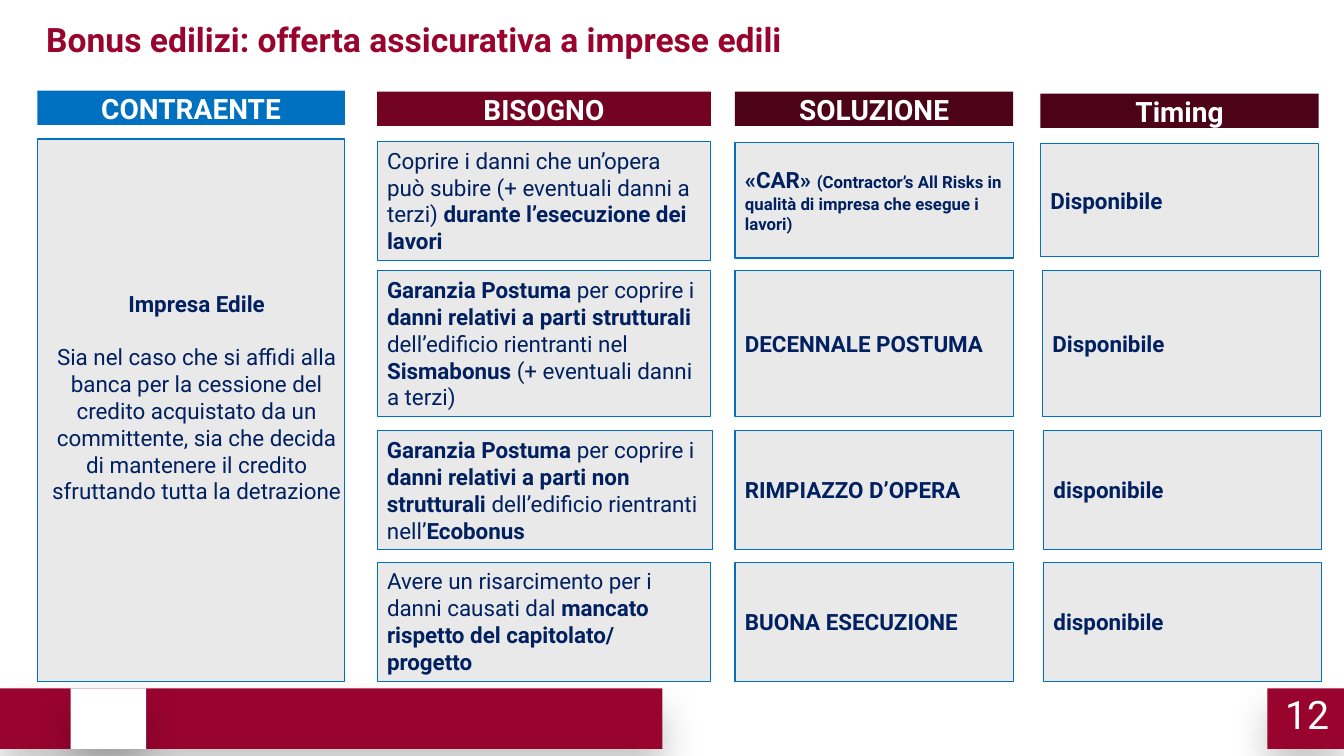
"""Build the slide on insurance offers for construction companies."""
from dataclasses import dataclass
from typing import NamedTuple

from lxml.etree import SubElement
from pptx import Presentation
from pptx.dml.color import RGBColor
from pptx.enum.shapes import MSO_SHAPE as SHAPE
from pptx.enum.text import MSO_ANCHOR as ANCHOR, PP_ALIGN as ALIGN
from pptx.oxml.ns import qn
from pptx.util import Emu, Pt

PX = 9144
FONT = "Roboto"
CRIMSON, WINE, MAROON = "99042F", "730323", "4C0217"
BLUE, NAVY, GREY, WHITE = "0070C0", "002060", "E9E9E9", "FFFFFF"


class Rect(NamedTuple):
    left: int
    top: int
    width: int
    height: int


class Run(NamedTuple):
    text: str
    bold: bool = True
    size: int = 0


@dataclass(frozen=True)
class Style:
    size: int
    color: str
    align: ALIGN = ALIGN.LEFT
    anchor: ANCHOR = ANCHOR.MIDDLE
    margins: tuple[int, int, int, int] = (10, 5, 10, 5)
    wrap: bool = True
    space_before: int = 0


@dataclass(frozen=True)
class Panel:
    rect: Rect
    fill: str
    paragraphs: tuple[tuple[Run, ...], ...] = ()
    style: Style = Style(16, NAVY)
    line: float = 0
    shadow: bool = False


HEADER = Style(20, WHITE, ALIGN.CENTER, margins=(0, 0, 0, 0))
CLIENT = Style(16, NAVY, ALIGN.CENTER, margins=(11, 0, 0, 26), space_before=19)
CARD = Style(16, NAVY)
TOP_CARD = Style(16, NAVY, anchor=ANCHOR.TOP)
TITLE = Style(24, CRIMSON, anchor=ANCHOR.TOP)
NUMBER = Style(28, WHITE, ALIGN.CENTER, margins=(13, 7, 13, 7), wrap=False)


def header(rect: Rect, fill: str, text: str) -> Panel:
    """Describe a column heading."""
    return Panel(rect, fill, ((Run(text),),), HEADER)


def card(rect: Rect, *runs: Run, style: Style = CARD) -> Panel:
    """Describe a bordered cell with one paragraph."""
    return Panel(rect, GREY, (runs,), style, 0.75)


PANELS = (
    Panel(Rect(0, 683, 657, 60), CRIMSON, shadow=True),
    Panel(Rect(70, 683, 75, 60), WHITE, shadow=True),
    Panel(Rect(1257, 683, 76, 60), CRIMSON, shadow=True),
    Panel(Rect(37, 138, 305, 538), GREY, (
        (Run("Impresa Edile"),),
        (Run("Sia nel caso che si affidi alla banca per la cessione del credito "
             "acquistato da un committente, sia che decida di mantenere il credito "
             "sfruttando tutta la detrazione", False),),
    ), CLIENT, 1),
    header(Rect(37, 90, 305, 34), BLUE, "CONTRAENTE"),
    header(Rect(374, 91, 331, 34), WINE, "BISOGNO"),
    header(Rect(729, 91, 276, 34), MAROON, "SOLUZIONE"),
    header(Rect(1032, 93, 276, 34), MAROON, "Timing"),
    card(Rect(374, 140, 331, 118),
         Run("Coprire i danni che un’opera può subire (+ eventuali danni a terzi) ", False),
         Run("durante l’esecuzione dei lavori")),
    card(Rect(374, 268, 331, 145),
         Run("Garanzia Postuma "), Run("per coprire i ", False),
         Run("danni relativi a parti strutturali "),
         Run("dell’edificio rientranti nel ", False),
         Run("Sismabonus "), Run("(+ eventuali danni a terzi)", False)),
    card(Rect(374, 427, 333, 118),
         Run("Garanzia Postuma "), Run("per coprire i ", False),
         Run("danni relativi a parti non strutturali "),
         Run("dell’edificio rientranti nell’", False), Run("Ecobonus")),
    card(Rect(374, 558, 331, 118),
         Run("Avere un risarcimento per i danni causati dal ", False),
         Run("mancato rispetto del capitolato/ progetto"), style=TOP_CARD),
    card(Rect(729, 141, 276, 115), Run("«CAR» "),
         Run("(Contractor’s All Risks in qualità di impresa che esegue i lavori)", size=12)),
    card(Rect(729, 268, 276, 145), Run("DECENNALE POSTUMA")),
    card(Rect(729, 427, 276, 118), Run("RIMPIAZZO D’OPERA")),
    card(Rect(729, 558, 276, 118), Run("BUONA ESECUZIONE")),
    card(Rect(1032, 142, 276, 113), Run("Disponibile")),
    card(Rect(1034, 268, 276, 145), Run("Disponibile")),
    card(Rect(1035, 427, 276, 118), Run("disponibile")),
    card(Rect(1035, 558, 276, 118), Run("disponibile")),
)


def rgb(value: str) -> RGBColor:
    """Turn a hex string into a colour."""
    return RGBColor.from_string(value)


def emu(lengths: tuple[int, ...]) -> list[Emu]:
    """Scale px to EMU."""
    return [Emu(n * PX) for n in lengths]


def write(s, paragraphs: tuple[tuple[Run, ...], ...], style: Style) -> None:
    """Fill a shape with styled paragraphs."""
    tf = s.text_frame
    tf.word_wrap = style.wrap
    tf.vertical_anchor = style.anchor
    tf.margin_left, tf.margin_top, tf.margin_right, tf.margin_bottom = emu(style.margins)
    for i, runs in enumerate(paragraphs):
        p = tf.add_paragraph() if i else tf.paragraphs[0]
        p.alignment = style.align
        if i:
            p.space_before = Pt(style.space_before)
        p.font.name, p.font.size = FONT, Pt(style.size)
        p.font.color.rgb = rgb(style.color)
        p.font.bold = all(run.bold for run in runs)
        for run in runs:
            r = p.add_run()
            r.text = run.text
            if run.bold != p.font.bold:
                r.font.bold = run.bold
            if run.size:
                r.font.size = Pt(run.size)


def add_shadow(s) -> None:
    """Give a shape a soft shadow below it."""
    effects = s._element.spPr.find(qn("a:effectLst"))
    shadow = SubElement(effects, qn("a:outerShdw"), blurRad=str(Pt(27)),
                        dist=str(Pt(15)), dir="5400000", rotWithShape="0")
    color = SubElement(shadow, qn("a:srgbClr"), val="000000")
    SubElement(color, qn("a:alpha"), val="21000")


def draw_panel(slide, panel: Panel) -> None:
    """Draw a filled rectangle with its text."""
    s = slide.shapes.add_shape(SHAPE.RECTANGLE, *emu(panel.rect))
    s.shadow.inherit = False
    s.fill.solid()
    s.fill.fore_color.rgb = rgb(panel.fill)
    if panel.line:
        s.line.color.rgb = rgb(BLUE)
        s.line.width = Pt(panel.line)
    else:
        s.line.fill.background()
    if panel.shadow:
        add_shadow(s)
    if panel.paragraphs:
        write(s, panel.paragraphs, panel.style)


def draw_text(slide, rect: Rect, run: Run, style: Style) -> None:
    """Draw a text box with one run."""
    write(slide.shapes.add_textbox(*emu(rect)), ((run,),), style)


def main() -> None:
    """Build and save the presentation."""
    prs = Presentation()
    prs.slide_width, prs.slide_height = emu((1333, 750))
    slide = prs.slides.add_slide(prs.slide_layouts[6])
    for panel in PANELS:
        draw_panel(slide, panel)
    draw_text(slide, Rect(1234, 634, 125, 149), Run("12", False), NUMBER)
    draw_text(slide, Rect(36, 14, 1109, 50),
              Run("Bonus edilizi: offerta assicurativa a imprese edili"), TITLE)
    prs.save("out.pptx")


if __name__ == "__main__":
    main()
